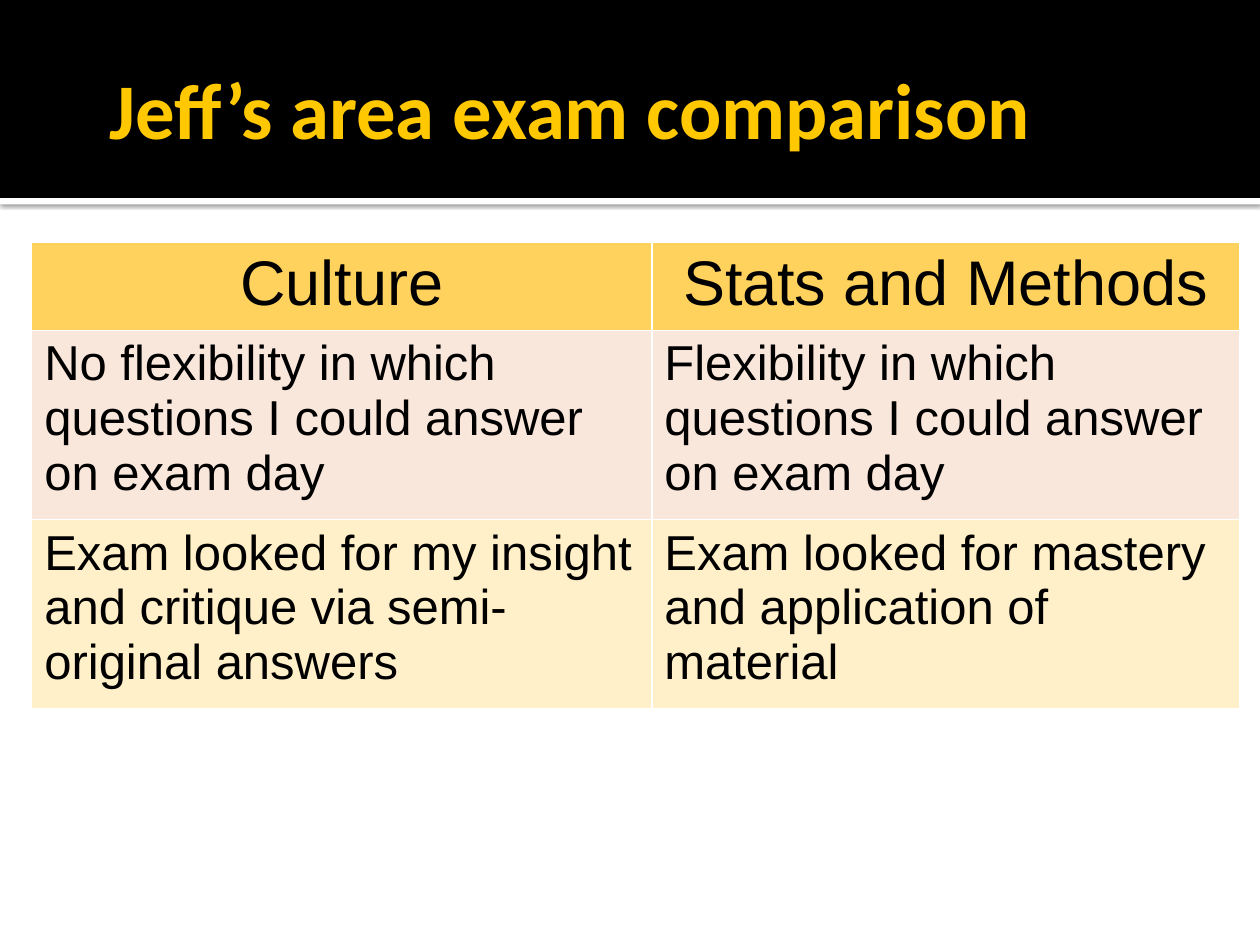
from dataclasses import dataclass

from lxml.etree import SubElement
from pptx import Presentation
from pptx.dml.color import RGBColor
from pptx.enum.shapes import MSO_SHAPE as Shape
from pptx.enum.text import MSO_ANCHOR as Anchor, PP_ALIGN as Align
from pptx.oxml.ns import qn
from pptx.util import Cm, Pt


@dataclass(frozen=True)
class Band:
    top: float
    height: float
    color: str
    shadow: bool = False


@dataclass(frozen=True)
class Row:
    texts: tuple[str, ...]
    height: float
    fill: str
    size: int = 28
    align: Align = Align.LEFT


WIDTH, HEIGHT = 25.4, 19.05
BANDS = (
    Band(3.99, 0.13, "FFFFFF", shadow=True),
    Band(0, 3.99, "000000"),
)
COLUMNS = (12.5, 11.85)
ROWS = (
    Row(("Culture", "Stats and Methods"), 1.72, "FFD25D", 36, Align.CENTER),
    Row(("No flexibility in which questions I could answer on exam day",
         "Flexibility in which questions I could answer on exam day"),
        3.56, "FAE7DC"),
    Row(("Exam looked for my insight and critique via semi-original answers",
         "Exam looked for mastery and application of material"),
        3.56, "FFF0C9"),
)


def rgb(color: str) -> RGBColor:
    return RGBColor.from_string(color)


def add_color(parent, color: str):
    return SubElement(parent, qn("a:srgbClr"), val=color)


def write(tf, text: str, *, size: int, color: str = "000000",
          font: str = "Arial", bold: bool = False,
          align: Align = Align.LEFT) -> None:
    tf.word_wrap = True
    p = tf.paragraphs[0]
    p.alignment = align
    r = p.add_run()
    r.text = text
    r.font.size = Pt(size)
    r.font.name = font
    r.font.bold = bold
    r.font.color.rgb = rgb(color)


def add_shadow(sp) -> None:
    effects = sp._element.spPr.find(qn("a:effectLst"))
    shadow = SubElement(effects, qn("a:outerShdw"), blurRad=str(Pt(2.5)),
                        dist=str(Pt(0.8)), dir="5400000", rotWithShape="0")
    SubElement(add_color(shadow, "000000"), qn("a:alpha"), val="60000")


def add_band(s, band: Band) -> None:
    sp = s.shapes.add_shape(Shape.RECTANGLE, 0, Cm(band.top),
                            Cm(WIDTH), Cm(band.height))
    sp.shadow.inherit = False
    sp.fill.solid()
    sp.fill.fore_color.rgb = rgb(band.color)
    sp.line.fill.background()
    if band.shadow:
        add_shadow(sp)


def add_title(s, text: str) -> None:
    sp = s.shapes.add_textbox(0, Cm(0.43), Cm(22.86), Cm(3.48))
    tf = sp.text_frame
    tf.vertical_anchor = Anchor.MIDDLE
    tf.margin_left = Cm(0.25)
    tf.margin_top = tf.margin_right = tf.margin_bottom = Cm(0.13)
    write(tf, text, size=45, color="FFC800", font="Calibri", bold=True,
          align=Align.CENTER)


def set_borders(cell, color: str, width: float) -> None:
    props = cell._tc.get_or_add_tcPr()
    for i, side in enumerate(("lnL", "lnR", "lnT", "lnB")):
        ln = props.makeelement(qn(f"a:{side}"), {"w": str(Pt(width))})
        add_color(SubElement(ln, qn("a:solidFill")), color)
        props.insert(i, ln)


def add_comparison(s, rows: tuple[Row, ...]) -> None:
    table = s.shapes.add_table(
        len(rows), len(COLUMNS), Cm(0.64), Cm(4.88),
        Cm(sum(COLUMNS)), Cm(sum(row.height for row in rows))).table
    for column, width in zip(table.columns, COLUMNS):
        column.width = Cm(width)
    for i, row in enumerate(rows):
        table.rows[i].height = Cm(row.height)
        for cell, text in zip(table.rows[i].cells, row.texts):
            cell.fill.solid()
            cell.fill.fore_color.rgb = rgb(row.fill)
            set_borders(cell, "FFFFFF", 1)
            write(cell.text_frame, text, size=row.size, align=row.align)


def main() -> None:
    prs = Presentation()
    prs.slide_width, prs.slide_height = Cm(WIDTH), Cm(HEIGHT)
    s = prs.slides.add_slide(prs.slide_layouts[6])
    for band in BANDS:
        add_band(s, band)
    add_title(s, "Jeff’s area exam comparison")
    add_comparison(s, ROWS)
    prs.save("out.pptx")


if __name__ == "__main__":
    main()
